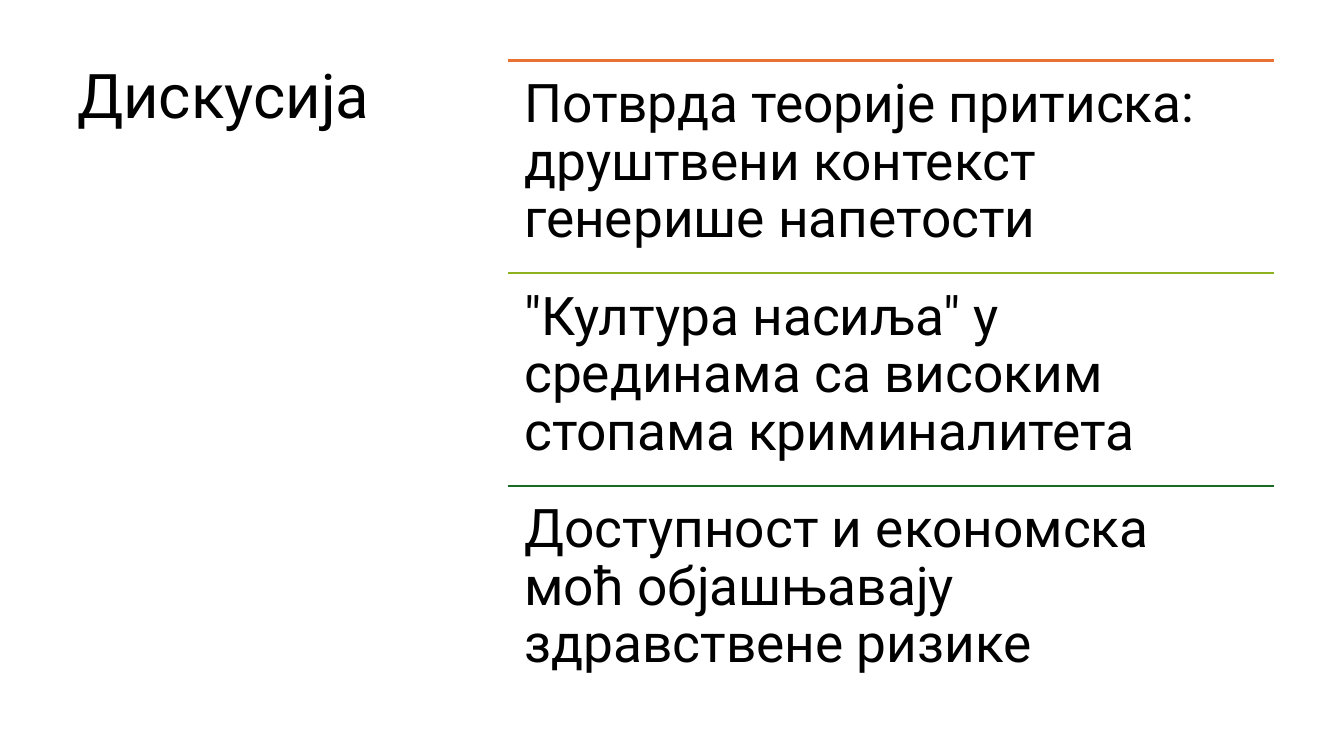
from dataclasses import dataclass

from lxml.etree import SubElement
from pptx import Presentation
from pptx.dml.color import RGBColor
from pptx.enum.shapes import MSO_CONNECTOR
from pptx.enum.text import MSO_ANCHOR
from pptx.oxml.ns import qn
from pptx.util import Inches, Pt

TITLE = "Дискусија"
FINDINGS = [
    ("Потврда теорије притиска: друштвени контекст генерише напетости", "E97132"),
    ('"Култура насиља" у срединама са високим стопама криминалитета', "8EB21E"),
    ("Доступност и економска моћ објашњавају здравствене ризике", "196B24"),
]


@dataclass(frozen=True)
class Theme:
    font: str = "Roboto"
    ink: str = "000000"
    title_size: int = 44
    finding_size: int = 38
    rule_width: float = 1.5
    line_spacing: float = 0.9


THEME = Theme()
SLIDE_W, SLIDE_H = 13.33, 7.5
TOP, BODY_H = 0.08 * SLIDE_H, 6.33
TITLE_LEFT, TITLE_W = 0.05 * SLIDE_W, 3.82
LIST_LEFT, LIST_W = 5.04, 7.6
ROW_H = BODY_H / len(FINDINGS)


def add_text(slide, wording, left, top, width, height, size, inset_x, inset_y):
    frame = slide.shapes.add_textbox(
        Inches(left), Inches(top), Inches(width), Inches(height)).text_frame
    frame.word_wrap = True
    frame.vertical_anchor = MSO_ANCHOR.TOP
    frame.margin_left = frame.margin_right = Inches(inset_x)
    frame.margin_top = frame.margin_bottom = Inches(inset_y)
    frame.text = wording
    paragraph = frame.paragraphs[0]
    paragraph.line_spacing = THEME.line_spacing
    font = paragraph.runs[0].font
    font.name, font.size = THEME.font, Pt(size)
    font.color.rgb = RGBColor.from_string(THEME.ink)


def add_rule(slide, top, color):
    rule = slide.shapes.add_connector(
        MSO_CONNECTOR.STRAIGHT, Inches(LIST_LEFT), Inches(top),
        Inches(LIST_LEFT + LIST_W), Inches(top))
    rule.line.color.rgb = RGBColor.from_string(color)
    rule.line.width = Pt(THEME.rule_width)
    SubElement(rule._element.spPr, qn("a:effectLst"))


def main():
    deck = Presentation()
    deck.slide_width, deck.slide_height = Inches(SLIDE_W), Inches(SLIDE_H)
    slide = deck.slides.add_slide(deck.slide_layouts[6])
    add_text(slide, TITLE, TITLE_LEFT, TOP, TITLE_W, BODY_H,
             THEME.title_size, 0.1, 0.05)
    for row, (finding, color) in enumerate(FINDINGS):
        top = TOP + row * ROW_H
        add_rule(slide, top, color)
        add_text(slide, finding, LIST_LEFT, top, LIST_W, ROW_H,
                 THEME.finding_size, 0.16, 0.16)
    deck.save("out.pptx")


if __name__ == "__main__":
    main()
